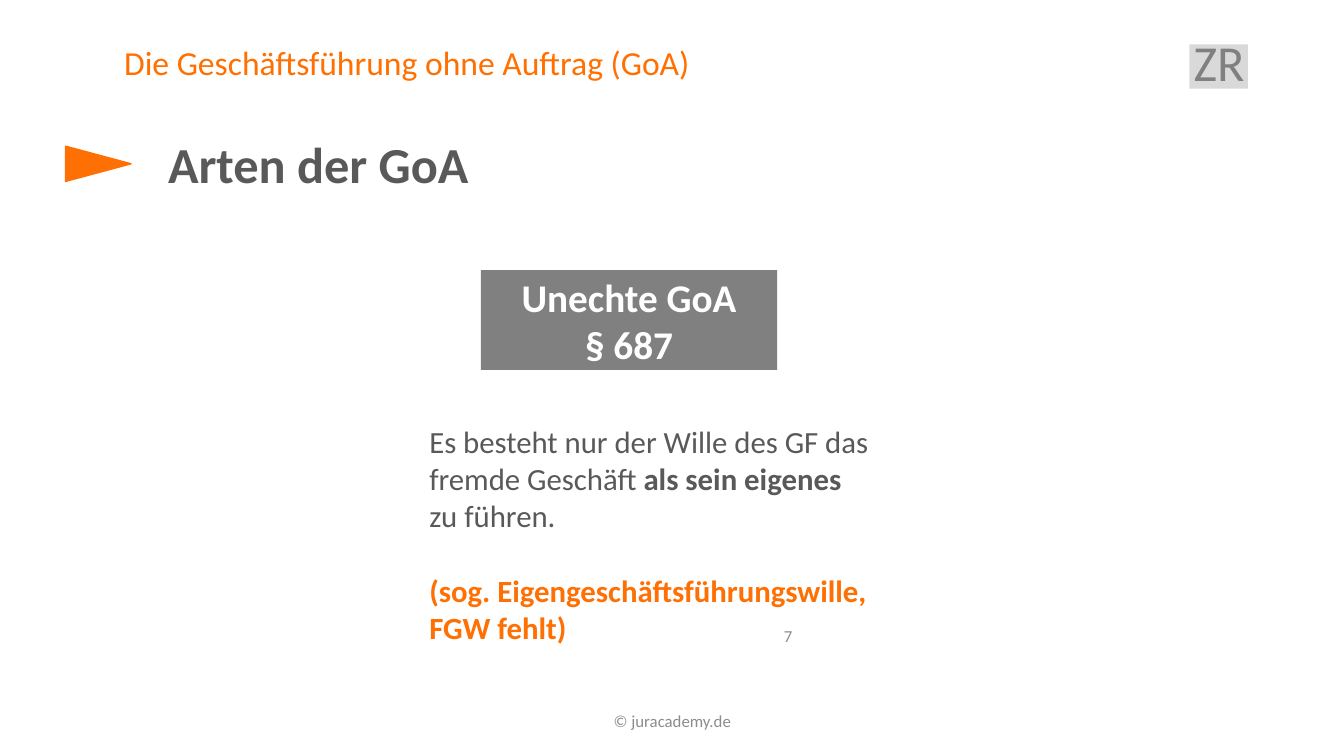
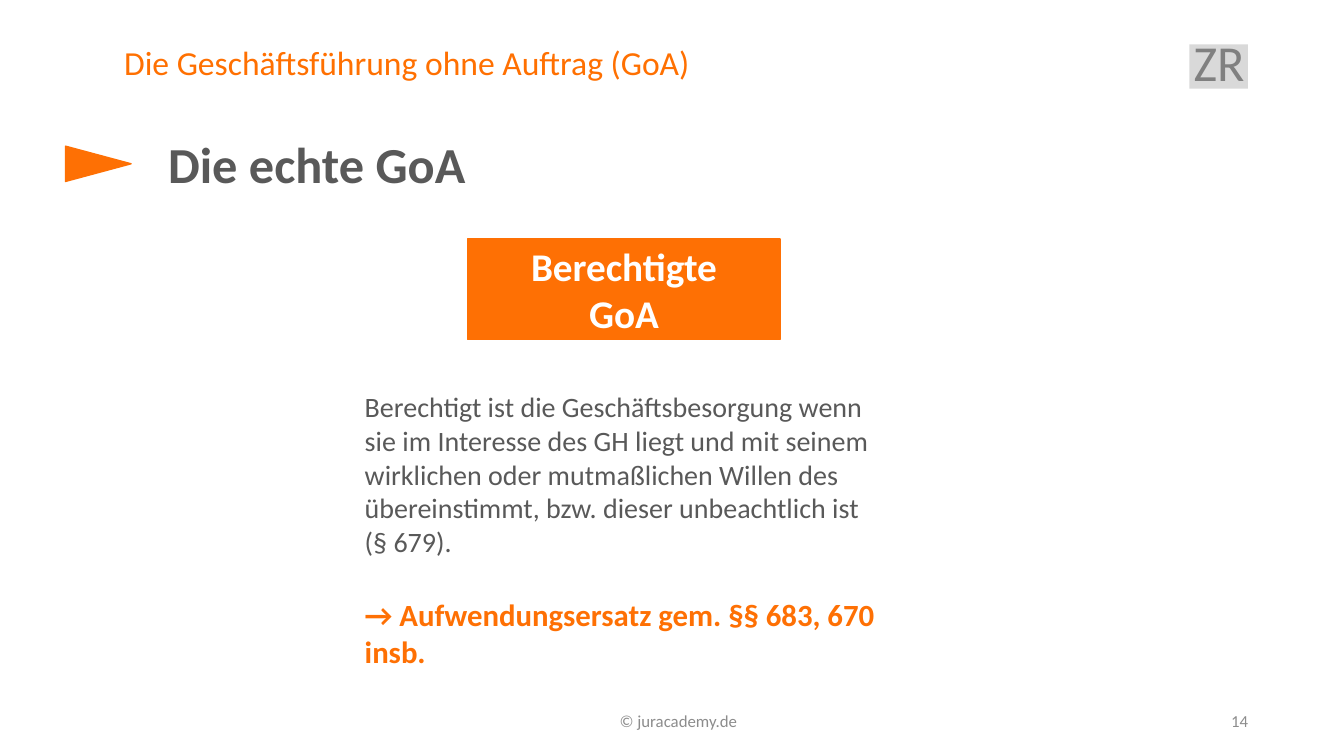
from dataclasses import dataclass

from pptx import Presentation
from pptx.dml.color import RGBColor
from pptx.enum.shapes import MSO_SHAPE
from pptx.enum.text import MSO_ANCHOR, PP_ALIGN
from pptx.util import Inches, Pt

FONT = "Calibri"
COLORS = {
    "title": "FF7001",
    "accent": "FE7004",
    "text": "595959",
    "gray": "808080",
    "footer": "8C8C8C",
    "badge": "D9D9D9",
    "white": "FFFFFF",
}


@dataclass
class Box:
    left: float
    top: float
    width: float
    height: float

    def inner(self, left, top, width, height):
        """Return an inner box, given in percent of this one."""
        return Box(
            self.left + self.width * left / 100,
            self.top + self.height * top / 100,
            self.width * width / 100,
            self.height * height / 100,
        )

    def lengths(self):
        return [Inches(n) for n in (self.left, self.top, self.width, self.height)]


PAGE = Box(0, 0, 13.33, 7.5)


@dataclass
class TextRun:
    text: str
    size: float
    color: str = "text"
    bold: bool = False


def write(shape, paragraphs, align=PP_ALIGN.LEFT, anchor=MSO_ANCHOR.TOP,
          line_spacing=1.0, gap=0):
    """Fill a shape with paragraphs, each a list of runs; gap separates them."""
    frame = shape.text_frame
    frame.word_wrap = True
    frame.vertical_anchor = anchor
    for index, text_runs in enumerate(paragraphs):
        paragraph = frame.add_paragraph() if index else frame.paragraphs[0]
        paragraph.alignment = align
        paragraph.line_spacing = line_spacing
        paragraph.space_before = Pt(gap if index else 0)
        for text_run in text_runs:
            run = paragraph.add_run()
            run.text = text_run.text
            run.font.name = FONT
            run.font.size = Pt(text_run.size)
            run.font.bold = text_run.bold
            run.font.color.rgb = RGBColor.from_string(COLORS[text_run.color])


def add_text(slide, box, paragraphs, **style):
    write(slide.shapes.add_textbox(*box.lengths()), paragraphs, **style)


def add_block(slide, box, color, kind=MSO_SHAPE.RECTANGLE, outlined=False):
    shape = slide.shapes.add_shape(kind, *box.lengths())
    shape.shadow.inherit = False
    shape.fill.solid()
    shape.fill.fore_color.rgb = RGBColor.from_string(COLORS[color])
    if outlined:
        shape.line.color.rgb = RGBColor.from_string(COLORS[color])
        shape.line.width = Pt(1)
    else:
        shape.line.fill.background()
    return shape


def add_header(slide, box):
    add_block(slide, box.inner(88.5, 5.87, 4.35, 5.87), "badge")
    add_text(slide, box.inner(8.5, 5.47, 74.9, 6.27),
             [[TextRun("Die Geschäftsführung ohne Auftrag (GoA)", 24, "title")]],
             line_spacing=0.9)
    add_text(slide, box.inner(87.45, 4.4, 6.5, 10), [[TextRun("ZR", 36, "gray")]],
             align=PP_ALIGN.CENTER, line_spacing=0.9)


def add_footer(slide, copyright_box, number_box, number):
    for box, text, align in (
        (copyright_box, "© juracademy.de", PP_ALIGN.CENTER),
        (number_box, number, PP_ALIGN.RIGHT),
    ):
        add_text(slide, box, [[TextRun(text, 12, "footer")]],
                 align=align, anchor=MSO_ANCHOR.MIDDLE)


def add_heading(slide, box, text):
    marker = add_block(slide, box.inner(1.71, 4.23, 4, 91.55), "accent",
                       MSO_SHAPE.ISOSCELES_TRIANGLE, outlined=True)
    marker.rotation = 90
    add_text(slide, box.inner(10.5, 0, 89.5, 100), [[TextRun(text, 36, bold=True)]])


def add_label(slide, box, lines, color, outlined):
    shape = add_block(slide, box, color, outlined=outlined)
    shape.text_frame.margin_top = shape.text_frame.margin_bottom = 0
    write(shape, [[TextRun(line, 28, "white", True)] for line in lines],
          align=PP_ALIGN.CENTER, anchor=MSO_ANCHOR.MIDDLE)


def add_definition(slide, box, definition, conclusion):
    """Place a definition and, one line below it, its highlighted conclusion."""
    add_text(slide, box, [definition, [TextRun(conclusion, 22, "accent", True)]],
             gap=27)


def add_concept_slide(presentation, concept):
    slide = presentation.slides.add_slide(presentation.slide_layouts[6])
    add_header(slide, PAGE)
    add_footer(slide, PAGE.inner(concept["copyright_left"], 92.67, 33.75, 5.33),
               PAGE.inner(*concept["number_box"]), concept["number"])
    add_heading(slide, PAGE.inner(4.88, 16.93, 65.63, 9.47), concept["heading"])
    add_label(slide, PAGE.inner(*concept["label_box"]), concept["label"],
              concept["label_color"], concept["label_outlined"])
    add_definition(slide, PAGE.inner(*concept["definition_box"]),
                   concept["definition"], concept["conclusion"])


CONCEPTS = [
    {
        "heading": "Arten der GoA",
        "number": "7",
        "number_box": (37.2, 81.47, 22.5, 5.33),
        "copyright_left": 33.15,
        "label": ["Unechte GoA", "§ 687"],
        "label_box": (35.78, 35.73, 22.05, 13.2),
        "label_color": "gray",
        "label_outlined": False,
        "definition_box": (31.2, 55.33, 34.6, 30.9),
        "definition": [
            TextRun("Es besteht nur der Wille des GF das fremde Geschäft ", 22),
            TextRun("als sein eigenes", 22, bold=True),
            TextRun(" zu führen.", 22),
        ],
        "conclusion": "(sog. Eigengeschäftsführungswille, FGW fehlt)",
    },
    {
        "heading": "Die echte GoA",
        "number": "14",
        "number_box": (71.1, 92.67, 22.5, 5.33),
        "copyright_left": 33.6,
        "label": ["Berechtigte", "GoA"],
        "label_box": (34.8, 31.6, 23.25, 13.33),
        "label_color": "accent",
        "label_outlined": True,
        "definition_box": (26.4, 50.93, 40.15, 38.53),
        "definition": [
            TextRun("Berechtigt ist die Geschäftsbesorgung wenn sie im Interesse des "
                    "GH liegt und mit seinem wirklichen oder mutmaßlichen Willen des "
                    "übereinstimmt, bzw. dieser unbeachtlich ist (§ 679).", 20),
        ],
        "conclusion": "→ Aufwendungsersatz gem. §§ 683, 670 insb.",
    },
]


def main():
    presentation = Presentation()
    presentation.slide_width = Inches(PAGE.width)
    presentation.slide_height = Inches(PAGE.height)
    for concept in CONCEPTS:
        add_concept_slide(presentation, concept)
    presentation.save("out.pptx")


if __name__ == "__main__":
    main()
